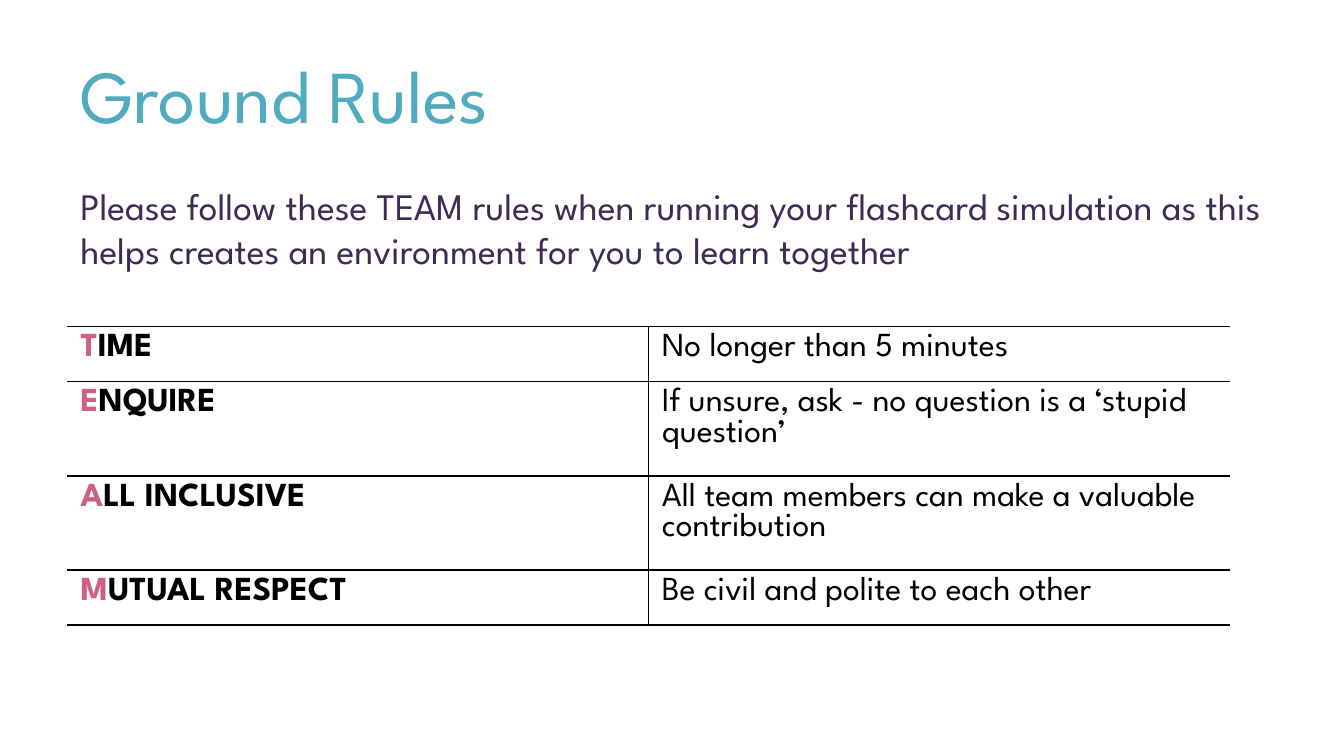
from lxml import etree
from pptx import Presentation
from pptx.dml.color import RGBColor
from pptx.enum.text import MSO_ANCHOR
from pptx.oxml.ns import qn
from pptx.util import Inches, Pt

MIDDLE, TOP = MSO_ANCHOR.MIDDLE, MSO_ANCHOR.TOP
FONT = "League Spartan"
TEAL = RGBColor(0x50, 0xAB, 0xBF)
PURPLE = RGBColor(0x3F, 0x2A, 0x56)
PINK = RGBColor(0xCD, 0x60, 0x84)
BLACK = RGBColor(0, 0, 0)

WIDE = 10
HIGH = WIDE * 9 / 16
LEFT = 0.05 * WIDE
ROW = 0.41
RULES = [
    ("TIME", "No longer than 5 minutes"),
    ("ENQUIRE", "If unsure, ask - no question is a ‘stupid question’"),
    ("ALL INCLUSIVE", "All team members can make a valuable contribution"),
    ("MUTUAL RESPECT", "Be civil and polite to each other"),
]


def add_run(para, text, size, color, bold=False):
    run = para.add_run()
    run.text = text
    font = run.font
    font.name, font.size, font.bold = FONT, Pt(size), bold
    font.color.rgb = color


def add_text(slide, box, text, size, color, anchor=TOP):
    frame = slide.shapes.add_textbox(*map(Inches, box)).text_frame
    frame.word_wrap = True
    frame.vertical_anchor = anchor
    add_run(frame.paragraphs[0], text, size, color)


def set_border(cell, sides):
    """Draw a 1 pt line on the named sides and none on the others."""
    props = cell._tc.get_or_add_tcPr()
    for spot, side in enumerate("LRTB"):
        line = etree.Element(qn(f"a:ln{side}"), w=str(Pt(1)))
        if side in sides:
            fill = etree.SubElement(line, qn("a:solidFill"))
            etree.SubElement(fill, qn("a:srgbClr"), val=str(BLACK))
        else:
            etree.SubElement(line, qn("a:noFill"))
        props.insert(spot, line)


def add_rules(slide, box):
    width = box[2]
    table = slide.shapes.add_table(len(RULES), 2, *map(Inches, box)).table
    table.first_row = table.horz_banding = False
    for col in table.columns:
        col.width = Inches(width / 2)
    for row, (name, rule) in zip(table.rows, RULES):
        row.height = Inches(ROW)
        key, note = row.cells
        for cell, sides in ((key, "RTB"), (note, "LTB")):
            cell.fill.background()
            set_border(cell, sides)
        # Initial letter in pink spells out TEAM
        para = key.text_frame.paragraphs[0]
        add_run(para, name[0], 18, PINK, True)
        add_run(para, name[1:], 18, BLACK, True)
        add_run(note.text_frame.paragraphs[0], rule, 18, BLACK)


def main():
    deck = Presentation()
    deck.slide_width, deck.slide_height = Inches(WIDE), Inches(HIGH)
    slide = deck.slides.add_slide(deck.slide_layouts[6])
    span = WIDE - 2 * LEFT

    # Title
    add_text(slide, (LEFT, 0.23, span, 0.94), "Ground Rules", 40, TEAL, MIDDLE)
    # Introduction
    add_text(slide, (LEFT, 1.31, span, 1.11),
             "Please follow these TEAM rules when running your flashcard "
             "simulation as this helps creates an environment for you to "
             "learn together", 20, PURPLE)
    # Table of rules
    add_rules(slide, (LEFT, 2.43, 8.65, ROW * len(RULES)))
    deck.save("out.pptx")


if __name__ == "__main__":
    main()
